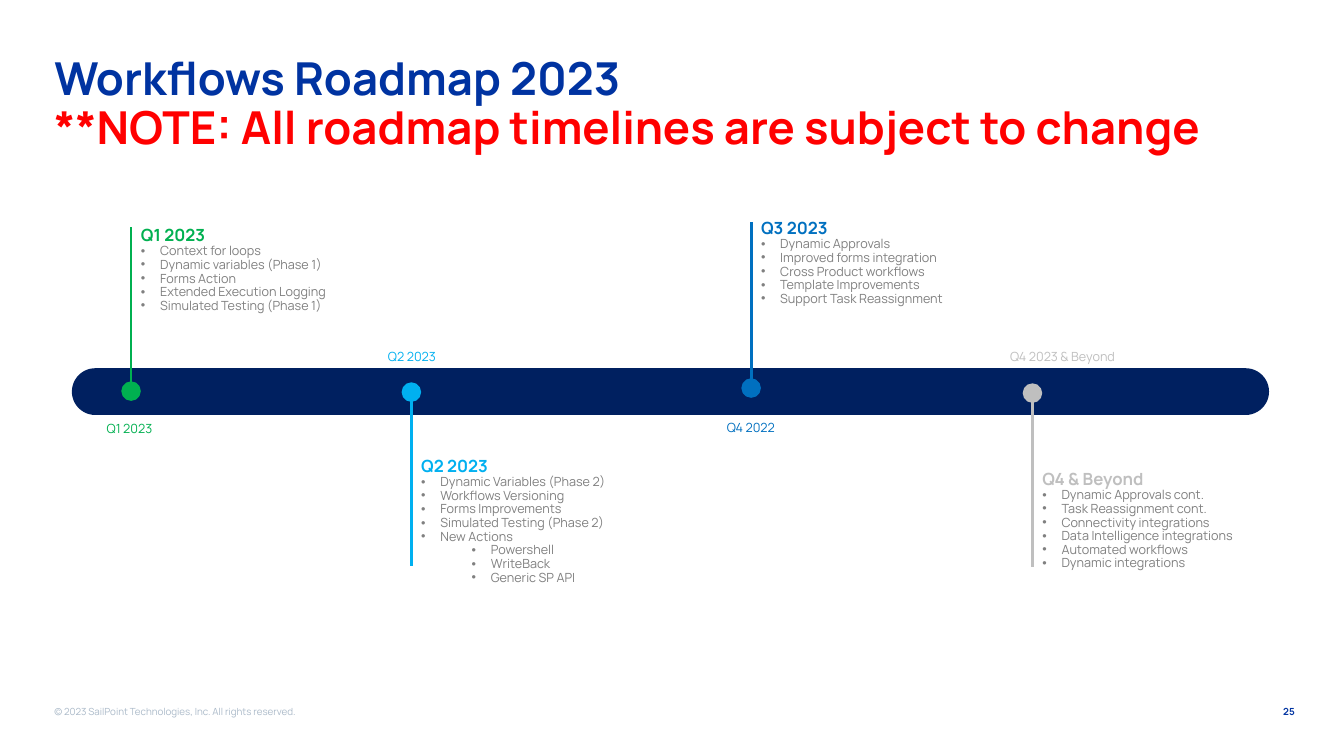
from lxml import etree
from pptx import Presentation
from pptx.dml.color import RGBColor as RGB
from pptx.enum.shapes import MSO_CONNECTOR as Line, MSO_SHAPE as Shape
from pptx.enum.text import MSO_ANCHOR as Anchor, MSO_AUTO_SIZE as Fit, PP_ALIGN as Align
from pptx.oxml.ns import qn
from pptx.util import Inches, Pt

HUES = dict(brand="0033A1", alert="FF0000", foot="ABBAC9", bar="002060", note="808080",
            green="00B050", cyan="00B0F0", blue="0070C0", gray="BFBFBF")
FONT = "Manrope"
INDENT = 0.19
DOT = 0.18

# Each stop: dot centre, then offsets from it for line end, notes and label;
# notes are (text, level) or plain text at level 0.
STOPS = [
    dict(hue="green", at=(1.3, 3.88), tip=-1.63, notes=(-1.68, 2.18, 1.06),
         label=("Q1 2023", -0.34, 0.26, 0.67), head="Q1 2023",
         items=["Context for loops", "Dynamic variables (Phase 1)", "Forms Action",
                "Extended Execution Logging", "Simulated Testing (Phase 1)"]),
    dict(hue="gray", at=(10.24, 3.9), tip=1.73, notes=(0.72, 2.26, 1.51),
         label=("Q4 2023 & Beyond", -0.32, -0.47, 1.34), head="Q4 & Beyond",
         items=["Dynamic Approvals cont.", "Task Reassignment cont.",
                "Connectivity integrations", "Data Intelligence integrations",
                "Automated workflows", "Dynamic integrations"]),
    dict(hue="cyan", at=(4.08, 3.89), tip=1.73, notes=(0.6, 2.23, 1.51),
         label=("Q2 2023", -0.33, -0.46, 0.7), head="Q2 2023",
         items=["Dynamic Variables (Phase 2)", "Workflows Versioning",
                "Forms Improvements", "Simulated Testing (Phase 2)", "New Actions",
                ("Powershell", 1), ("WriteBack", 1), ("Generic SP API", 1)]),
    dict(hue="blue", at=(7.45, 3.85), tip=-1.65, notes=(-1.72, 2.15, 1.21),
         label=("Q4 2022", -0.34, 0.28, 0.71), head="Q3 2023",
         items=["Dynamic Approvals", "Improved forms integration",
                "Cross Product workflows", "Template Improvements",
                "Support Task Reassignment"]),
]


def color(hue):
    return RGB.from_string(HUES[hue])


def style(font, size, hue, bold=False):
    for key, value in dict(name=FONT, size=Pt(size), bold=bold).items():
        setattr(font, key, value)
    font.color.rgb = color(hue)


def write(para, text, size, hue, bold=False):
    run = para.add_run()
    run.text = text
    style(run.font, size, hue, bold)


def bullet(para, level):
    para.level = level
    props = para._p.get_or_add_pPr()
    props.set("marL", str(Inches(INDENT + level / 2)))
    props.set("indent", str(-Inches(INDENT)))
    etree.SubElement(props, qn("a:buFont")).set("typeface", "Arial")
    etree.SubElement(props, qn("a:buChar")).set("char", "•")


def frame(slide, box, wrap=False):
    text = slide.shapes.add_textbox(*map(Inches, box)).text_frame
    text.word_wrap = wrap
    text.auto_size = Fit.NONE if wrap else Fit.SHAPE_TO_FIT_TEXT
    text.vertical_anchor = Anchor.MIDDLE if wrap else Anchor.TOP
    text.paragraphs[0].line_spacing = 0.9
    return text


def solid(slide, kind, box, hue):
    shape = slide.shapes.add_shape(kind, *map(Inches, box))
    shape.shadow.inherit = False
    shape.fill.solid()
    shape.fill.fore_color.rgb = shape.line.color.rgb = color(hue)
    shape.line.width = Pt(1)
    return shape


def title(slide, box):
    shape = slide.shapes.title
    for key, value in zip(("left", "top", "width", "height"), box):
        setattr(shape, key, Inches(value))
    text = shape.text_frame
    text.auto_size, text.vertical_anchor = Fit.NONE, Anchor.MIDDLE
    para = text.paragraphs[0]
    para.alignment, para.line_spacing = Align.LEFT, 0.9
    write(para, "Workflows Roadmap 2023", 32.4, "brand", True)
    para.add_line_break()
    write(para, "**NOTE: All roadmap timelines are subject to change", 32.4, "alert", True)


def footer(slide, box):
    left, top, width, height = box
    note = frame(slide, (left, top, 4.24, height), True).paragraphs[0]
    write(note, "© 2023 SailPoint Technologies, Inc. All rights reserved.", 7, "foot")
    page = frame(slide, (left + width - 0.87, top, 0.87, height), True).paragraphs[0]
    page.alignment = Align.RIGHT
    write(page, "25", 7, "brand", True)


def notes(slide, box, head, items, hue):
    text = frame(slide, box)
    write(text.paragraphs[0], head, 12, hue, True)
    for item in items:
        words, level = (item, 0) if isinstance(item, str) else item
        para = text.add_paragraph()
        para.line_spacing = 0.9
        bullet(para, level)
        write(para, words, 9, "note")


def stop(slide, at, hue, tip, notes_at, label, head, items):
    x, y = at
    solid(slide, Shape.OVAL, (x - DOT / 2, y - DOT / 2, DOT, DOT), hue)
    line = slide.shapes.add_connector(Line.STRAIGHT, *map(Inches, (x, y, x, y + tip)))
    line.line.color.rgb, line.line.width = color(hue), Pt(2)
    etree.SubElement(line._element.spPr, qn("a:effectLst"))
    down, width, height = notes_at
    notes(slide, (x, y + down, width, height), head, items, hue)
    words, across, down, width = label
    para = frame(slide, (x + across, y + down, width, 0.25)).paragraphs[0]
    write(para, words, 9, hue)


def roadmap(slide, box):
    solid(slide, Shape.ROUNDED_RECTANGLE, box, "bar").adjustments[0] = 0.5
    for data in STOPS:
        stop(slide, data["at"], data["hue"], data["tip"], data["notes"],
             data["label"], data["head"], data["items"])


def main():
    deck = Presentation()
    deck.slide_width, deck.slide_height = Inches(13.33), Inches(7.5)
    slide = deck.slides.add_slide(deck.slide_layouts[5])
    title(slide, (0.44, 0.4, 11.63, 1.28))
    roadmap(slide, (0.72, 3.66, 11.86, 0.45))
    footer(slide, (0.44, 6.94, 12.5, 0.25))
    deck.save("out.pptx")


if __name__ == "__main__":
    main()
